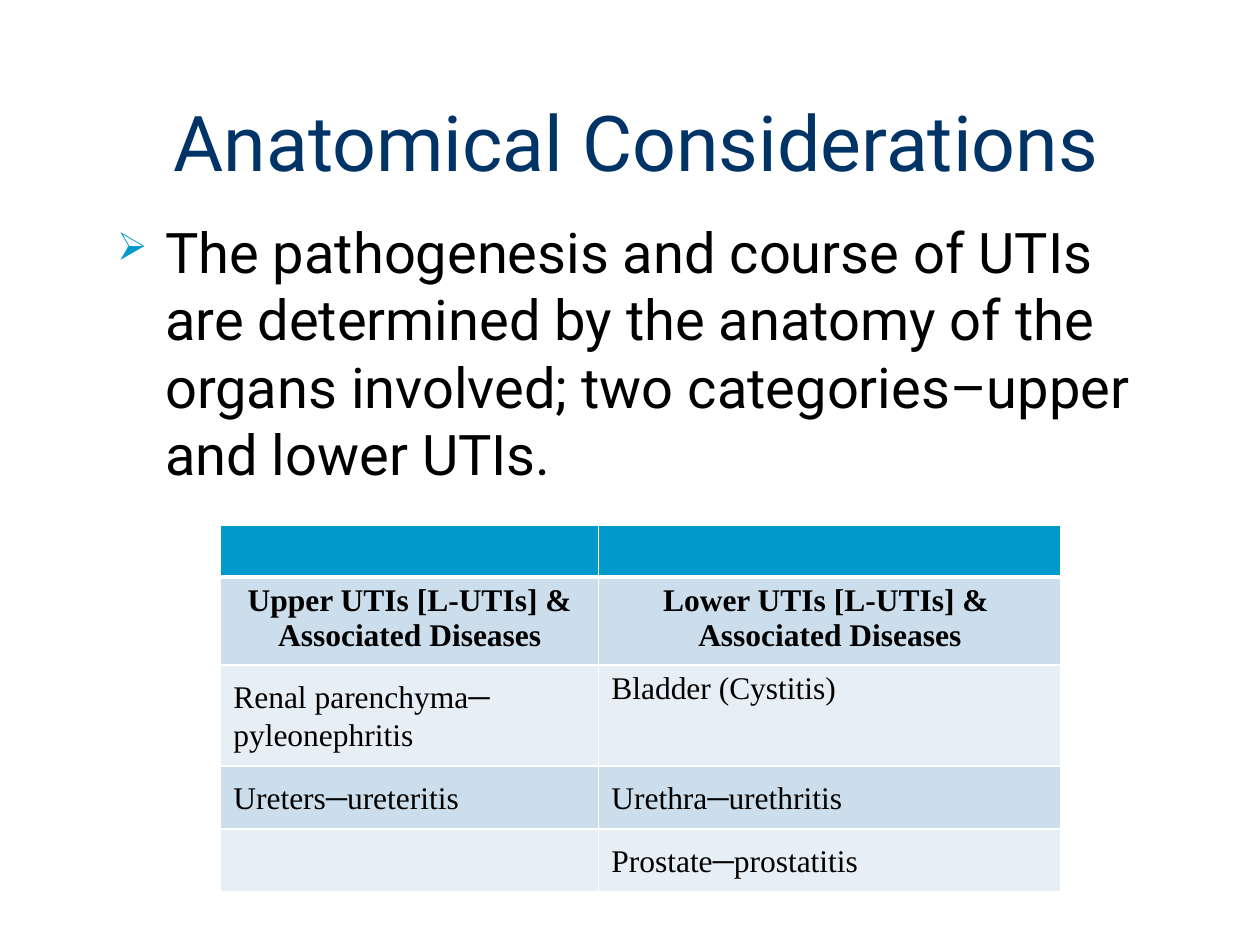
from lxml import etree
from pptx import Presentation
from pptx import util as u
from pptx.dml.color import RGBColor
from pptx.enum import text
from pptx.oxml import ns

COLORS = {
    "title": "003366",
    "accent": "0099CC",
    "body": "000000",
    "border": "FFFFFF",
    "band_dark": "CCDEEC",
    "band_light": "E7EFF6",
}
SANS, SERIF = "Roboto", "Times New Roman"
DASH = "–"
COLUMN_WIDTHS = [7.62, 9.32]
ROW_HEIGHTS = [1.04, 1.78, 1.78, 1.04, 1.04]
DISEASES = [
    ("", ""),
    ("Upper UTIs [L-UTIs] & Associated Diseases",
     "Lower UTIs [L-UTIs] & \nAssociated Diseases"),
    ("Renal parenchyma–pyleonephritis", "Bladder (Cystitis)"),
    ("Ureters–ureteritis", "Urethra–urethritis"),
    ("", "Prostate–prostatitis"),
]


def rgb(name):
    return RGBColor.from_string(COLORS[name])


def sub(parent, tag, **attributes):
    return etree.SubElement(parent, ns.qn(tag), attributes)


def write(paragraph, words, size, font, color="body", bold=False, align=None,
          dash_size=None):
    """Fill a paragraph; dash_size sets the en dashes at their own size."""
    paragraph.alignment = align
    for line_number, line in enumerate(words.split("\n")):
        if line_number:
            paragraph.add_line_break()
        pieces = line.partition(DASH) if dash_size else [line]
        for piece in filter(None, pieces):
            run = paragraph.add_run()
            run.text = piece
            run.font.size = u.Pt(dash_size if piece == DASH else size)
            run.font.name = font
            run.font.bold = bold
            run.font.color.rgb = rgb(color)


def indent(paragraph, left, first=0):
    properties = paragraph._p.get_or_add_pPr()
    properties.set("marL", str(u.Cm(left)))
    properties.set("indent", str(u.Cm(first)))
    return properties


def add_bullet(properties, char, color, percent):
    sub(sub(properties, "a:buClr"), "a:srgbClr", val=COLORS[color])
    sub(properties, "a:buSzPct", val=str(percent * 1000))
    sub(properties, "a:buChar", char=char)


def add_text_area(slide, left, top, width, height, anchor):
    """Add a wrapping text box and return its first paragraph."""
    frame = slide.shapes.add_textbox(
        u.Cm(left), u.Cm(top), u.Cm(width), u.Cm(height)).text_frame
    frame.word_wrap = True
    frame.vertical_anchor = anchor
    frame.margin_left = frame.margin_top = frame.margin_bottom = u.Cm(0.15)
    frame.margin_right = u.Cm(0.25)
    return frame.paragraphs[0]


def set_borders(cell, top=1, bottom=1):
    properties = cell._tc.get_or_add_tcPr()
    for side, width in zip("LRTB", (1, 1, top, bottom)):
        line = sub(properties, f"a:ln{side}", w=str(u.Pt(width)))
        sub(sub(line, "a:solidFill"), "a:srgbClr", val=COLORS["border"])


def add_disease_table(slide, left, top):
    table = slide.shapes.add_table(
        len(ROW_HEIGHTS), len(COLUMN_WIDTHS), u.Cm(left), u.Cm(top),
        u.Cm(sum(COLUMN_WIDTHS)), u.Cm(sum(ROW_HEIGHTS))).table
    for column, width in zip(table.columns, COLUMN_WIDTHS):
        column.width = u.Cm(width)
    for r, (height, entries) in enumerate(zip(ROW_HEIGHTS, DISEASES)):
        table.rows[r].height = u.Cm(height)
        band = "accent" if r == 0 else "band_dark" if r % 2 else "band_light"
        heading = r == 1
        for c, entry in enumerate(entries):
            cell = table.cell(r, c)
            set_borders(cell, top=3 if r == 1 else 1, bottom=3 if r == 0 else 1)
            cell.fill.solid()
            cell.fill.fore_color.rgb = rgb(band)
            write(cell.text_frame.paragraphs[0], entry, 18, SERIF, bold=heading,
                  align=text.PP_ALIGN.CENTER if heading else None, dash_size=24)


def main():
    presentation = Presentation()
    presentation.slide_width, presentation.slide_height = u.Cm(25.4), u.Cm(19.05)
    slide = presentation.slides.add_slide(presentation.slide_layouts[6])

    title = add_text_area(slide, 3.25, 0.2, 21.6, 5.28, text.MSO_ANCHOR.MIDDLE)
    indent(title, 0.1)
    write(title, "Anatomical Considerations", 44, SANS, color="title")

    summary = add_text_area(slide, 2.11, 4.24, 21.6, 13.54, text.MSO_ANCHOR.TOP)
    add_bullet(indent(summary, 1.07, -0.97), "➢", "accent", 69)
    write(summary,
          "The pathogenesis and course of UTIs are determined by the anatomy of "
          "the organs involved; two categories–upper and lower UTIs.", 32, SANS)

    add_disease_table(slide, 4.45, 10.59)
    presentation.save("out.pptx")


if __name__ == "__main__":
    main()
